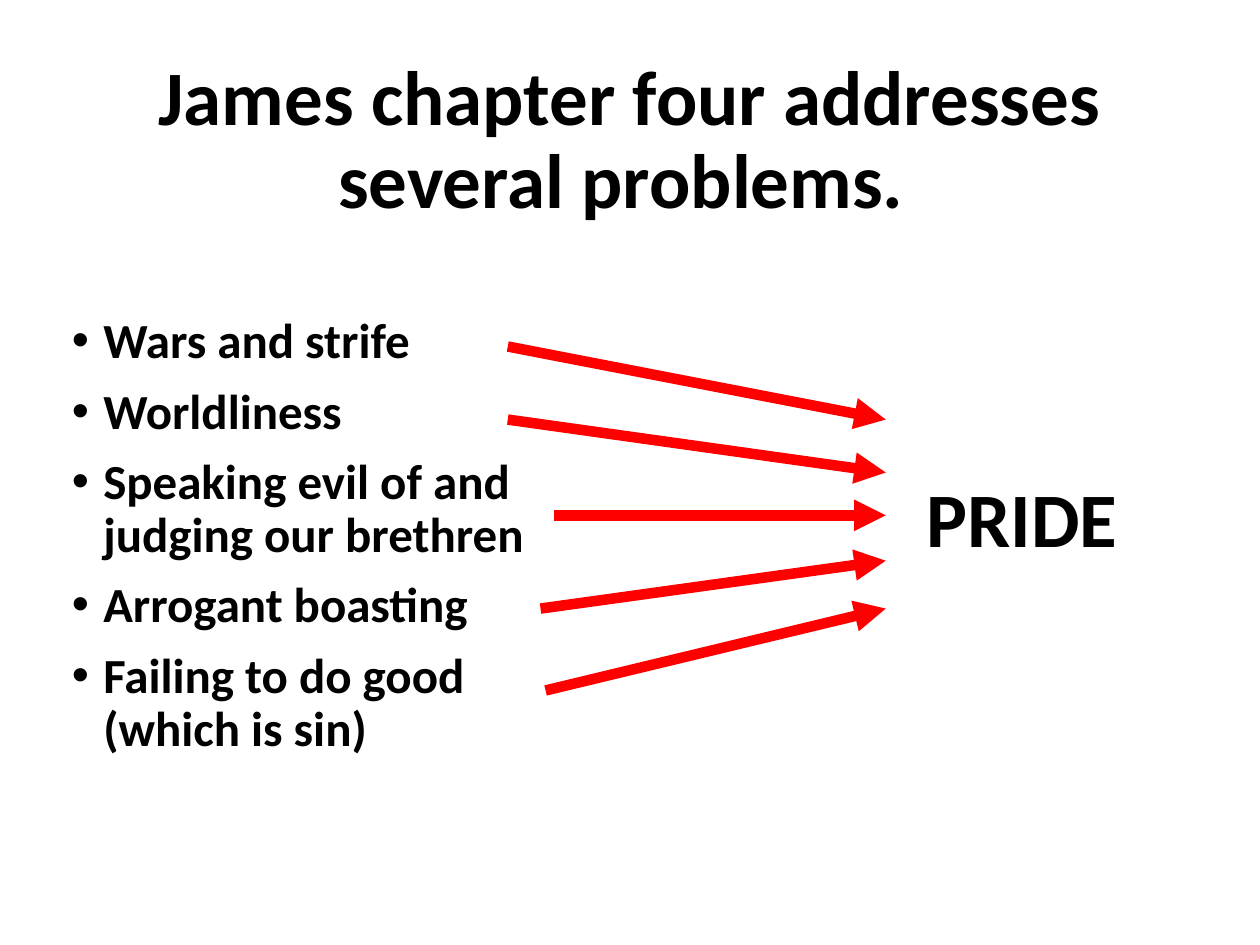
from lxml.etree import SubElement
from pptx import Presentation
from pptx.dml.color import RGBColor
from pptx.enum.shapes import MSO_CONNECTOR
from pptx.enum.text import MSO_ANCHOR, MSO_AUTO_SIZE, PP_ALIGN
from pptx.oxml.ns import qn
from pptx.util import Inches, Pt

BLACK = RGBColor(0, 0, 0)
RED = RGBColor(255, 0, 0)

TITLE = "James chapter four addresses several problems. "
PROBLEMS = [
    "Wars and strife",
    "Worldliness",
    "Speaking evil of and judging our brethren",
    "Arrogant boasting",
    "Failing to do good (which is sin)",
]
ROOT = "PRIDE"

TIP_X = 7.03
# Start x, start y and tip y, one arrow per problem
ARROWS = [
    (4.03, 2.75, 3.33),
    (4.03, 3.33, 3.75),
    (4.4, 4.09, 4.09),
    (4.29, 4.83, 4.45),
    (4.33, 5.48, 4.83),
]


def place(shape, left, top, width, height):
    shape.left, shape.top = Inches(left), Inches(top)
    shape.width, shape.height = Inches(width), Inches(height)


def write(shape, lines, size=28, align=PP_ALIGN.LEFT, anchor=MSO_ANCHOR.TOP,
          before=0, inset=0.05, bullet=False):
    frame = shape.text_frame
    frame.text = "\n".join(lines)
    frame.word_wrap = True
    frame.auto_size = MSO_AUTO_SIZE.NONE
    frame.vertical_anchor = anchor
    frame.margin_top = Inches(inset)
    for para in frame.paragraphs:
        para.alignment = align
        para.line_spacing = 0.9
        para.space_before = Pt(before)
        font = para.font
        for run in para.runs:
            font = run.font
            font.name, font.size, font.bold = "Calibri", Pt(size), True
            font.color.rgb = BLACK
        set_bullet(para, bullet)


def set_bullet(para, shown):
    props = para._p.get_or_add_pPr()
    indent = Inches(0.25) if shown else 0
    props.set("marL", str(indent))
    props.set("indent", str(-indent))
    if shown:
        SubElement(props, qn("a:buFont"), typeface="Arial")
        SubElement(props, qn("a:buChar"), char="•")
    else:
        SubElement(props, qn("a:buNone"))


def add_arrow(slide, x, y, tip_y):
    arrow = slide.shapes.add_connector(
        MSO_CONNECTOR.STRAIGHT, Inches(x), Inches(y), Inches(TIP_X), Inches(tip_y))
    arrow.line.color.rgb = RED
    arrow.line.width = Pt(6)
    SubElement(arrow.line._get_or_add_ln(), qn("a:tailEnd"), type="triangle")
    SubElement(arrow._element.spPr, qn("a:effectLst"))


def main():
    deck = Presentation()
    deck.slide_width, deck.slide_height = Inches(10), Inches(7.5)
    slide = deck.slides.add_slide(deck.slide_layouts.get_by_name("Two Content"))
    title, problems, root = list(slide.placeholders)[:3]

    place(title, 0.69, 0.4, 8.62, 1.45)
    write(title, [TITLE], size=44, align=PP_ALIGN.CENTER, anchor=MSO_ANCHOR.MIDDLE)
    place(problems, 0.47, 2.46, 4.25, 4.76)
    write(problems, PROBLEMS, before=10, bullet=True)
    place(root, 6.68, 2.15, 2.29, 4.76)
    write(root, [ROOT], size=44, align=PP_ALIGN.RIGHT, inset=1.67)

    for x, y, tip_y in ARROWS:
        add_arrow(slide, x, y, tip_y)
    deck.save("out.pptx")


if __name__ == "__main__":
    main()
